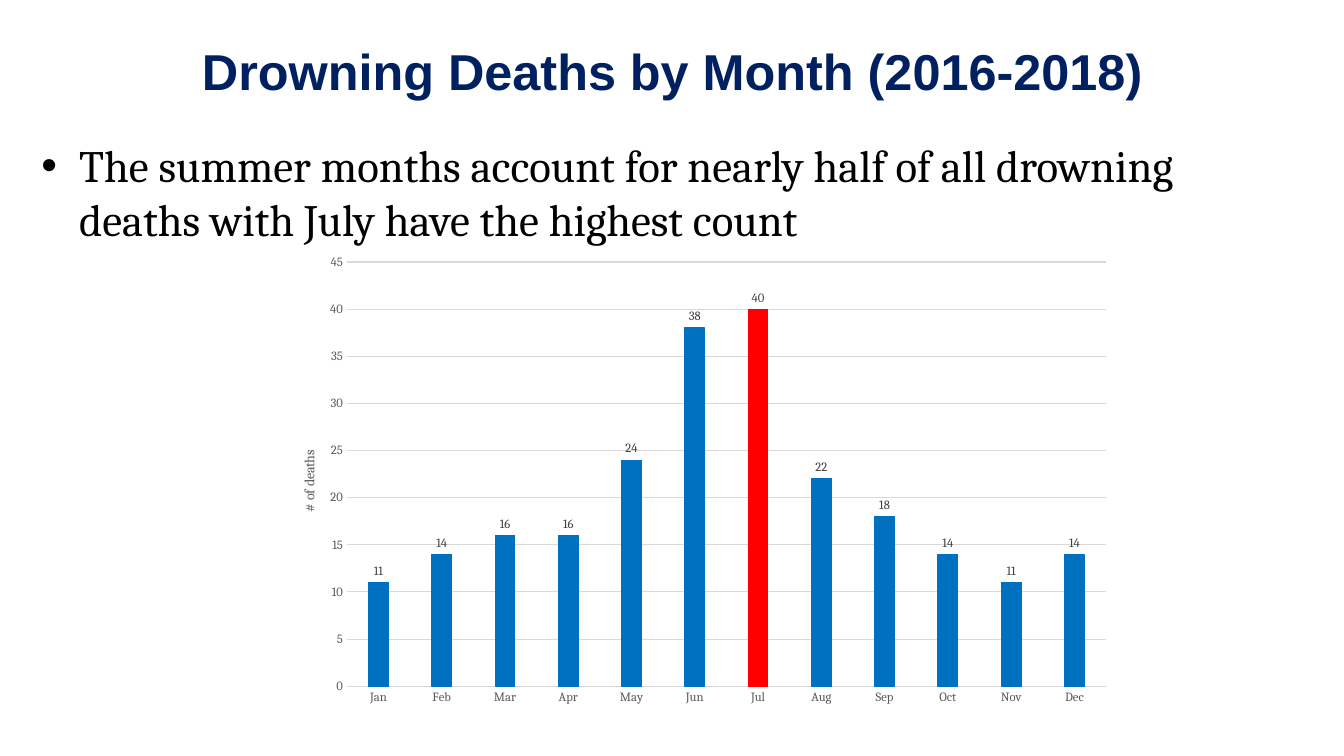
import pptx
import pptx.util
import pptx.dml.color
import pptx.chart.data
import pptx.enum.chart
import pptx.enum.text
import pptx.oxml
import pptx.oxml.ns
from dataclasses import dataclass

# Content
TITLE = "Drowning Deaths by Month (2016-2018)"
POINT = ("The summer months account for nearly half of all drowning "
         "deaths with July have the highest count")
SIDE = "# of deaths"
DEATHS = {"Jan": 11, "Feb": 14, "Mar": 16, "Apr": 16, "May": 24, "Jun": 38,
          "Jul": 40, "Aug": 22, "Sep": 18, "Oct": 14, "Nov": 11, "Dec": 14}
PEAK = max(DEATHS, key=DEATHS.get)

# Places: left, top, width, height in inches
SLIDE = (13.33, 7.5)
HEAD = (0.07, 0.21, 13.2, 0.97)
BODY = (0.31, 1.32, 12.72, 4.87)
CHART = (2.69, 2.44, 8.45, 4.65)
PLOT = (3.44, 2.6, 7.53, 4.21)
LABEL = (2.95, 4.44)


@dataclass(frozen=True)
class Theme:
    navy: str = "002060"
    ink: str = "000000"
    gray: str = "595959"
    dark: str = "404040"
    rule: str = "D9D9D9"
    bar: str = "0070C0"
    peak: str = "FF0000"
    sans: str = "Arial"
    serif: str = "Cambria"
    head: int = 36
    body: int = 32
    side: int = 10
    tick: int = 9
    line: float = 0.75


theme = Theme()
Enum = pptx.enum.chart
Text = pptx.enum.text


def inches(box):
    return [pptx.util.Inches(n) for n in box]


def assign(item, values):
    for name, value in values.items():
        setattr(item, name, value)


def style(font, size, color, face, bold=False):
    assign(font, {"size": pptx.util.Pt(size), "name": face, "bold": bold})
    font.color.rgb = pptx.dml.color.RGBColor.from_string(color)


def paint(fill, color):
    fill.solid()
    fill.fore_color.rgb = pptx.dml.color.RGBColor.from_string(color)


def stroke(line, color):
    paint(line.fill, color)
    line.width = pptx.util.Pt(theme.line)


def write(holder, text, box, anchor, align):
    assign(holder, dict(zip(("left", "top", "width", "height"), inches(box))))
    frame = holder.text_frame
    frame.text = text
    assign(frame, {"word_wrap": True, "vertical_anchor": anchor,
                   "auto_size": Text.MSO_AUTO_SIZE.NONE})
    frame.paragraphs[0].alignment = align
    return frame.paragraphs[0].runs[0].font


def layout(owner, box, inner=False):
    """Fix a chart part at a slide position, as shares of the chart frame."""
    left, top, width, height = CHART
    share = [(box[0] - left) / width, (box[1] - top) / height]
    share += [n / size for n, size in zip(box[2:], (width, height))]
    names = "xywh"[:len(share)]
    parts = '<c:layoutTarget val="inner"/>' if inner else ""
    parts += "".join(f'<c:{n}Mode val="edge"/>' for n in names[:2])
    parts += "".join(f'<c:{n} val="{v:.4f}"/>' for n, v in zip(names, share))
    node = pptx.oxml.parse_xml(
        f'<c:layout {pptx.oxml.ns.nsdecls("c")}><c:manualLayout>{parts}'
        '</c:manualLayout></c:layout>')
    for old in owner.xpath("c:layout"):
        owner.remove(old)
    owner.insert(len(owner.xpath("c:tx")), node)


def draw(slide):
    data = pptx.chart.data.CategoryChartData()
    data.categories = list(DEATHS)
    data.add_series("Series 1", list(DEATHS.values()))
    chart = slide.shapes.add_chart(
        Enum.XL_CHART_TYPE.COLUMN_CLUSTERED, *inches(CHART), data).chart
    assign(chart, {"has_legend": False, "has_title": False})
    style(chart.font, theme.side, theme.ink, theme.serif)

    # Bars
    plot = chart.plots[0]
    assign(plot, {"gap_width": 219, "overlap": -27,
                  "vary_by_categories": False, "has_data_labels": True})
    bars = plot.series[0]
    paint(bars.format.fill, theme.bar)
    stroke(bars.format.line, theme.bar)
    peak = bars.points[list(DEATHS).index(PEAK)].format
    paint(peak.fill, theme.peak)
    stroke(peak.line, theme.peak)
    assign(plot.data_labels, {
        "show_value": True,
        "position": Enum.XL_LABEL_POSITION.OUTSIDE_END})
    style(plot.data_labels.font, theme.tick, theme.dark, theme.serif)

    # Axes
    months, count = chart.category_axis, chart.value_axis
    for axis in (months, count):
        assign(axis, {"major_tick_mark": Enum.XL_TICK_MARK.NONE,
                      "minor_tick_mark": Enum.XL_TICK_MARK.NONE})
        style(axis.tick_labels.font, theme.tick, theme.gray, theme.serif)
    stroke(months.format.line, theme.rule)
    assign(count, {"minimum_scale": 0, "maximum_scale": 45, "major_unit": 5,
                   "has_major_gridlines": True, "has_title": True})
    count.format.line.fill.background()
    stroke(count.major_gridlines.format.line, theme.rule)
    frame = count.axis_title.text_frame
    frame.text = SIDE
    style(frame.paragraphs[0].runs[0].font, theme.side, theme.gray,
          theme.serif)

    layout(chart.element.xpath(".//c:plotArea")[0], PLOT, inner=True)
    layout(chart.element.xpath(".//c:valAx/c:title")[0], LABEL)


def main():
    deck = pptx.Presentation()
    deck.slide_width, deck.slide_height = inches(SLIDE)
    slide = deck.slides.add_slide(deck.slide_layouts[1])

    # Title and bullet
    font = write(slide.shapes.title, TITLE, HEAD,
                 Text.MSO_ANCHOR.MIDDLE, Text.PP_ALIGN.CENTER)
    style(font, theme.head, theme.navy, theme.sans, bold=True)
    font = write(slide.placeholders[1], POINT, BODY,
                 Text.MSO_ANCHOR.TOP, Text.PP_ALIGN.LEFT)
    style(font, theme.body, theme.ink, theme.serif)

    draw(slide)
    deck.save("out.pptx")


if __name__ == "__main__":
    main()
